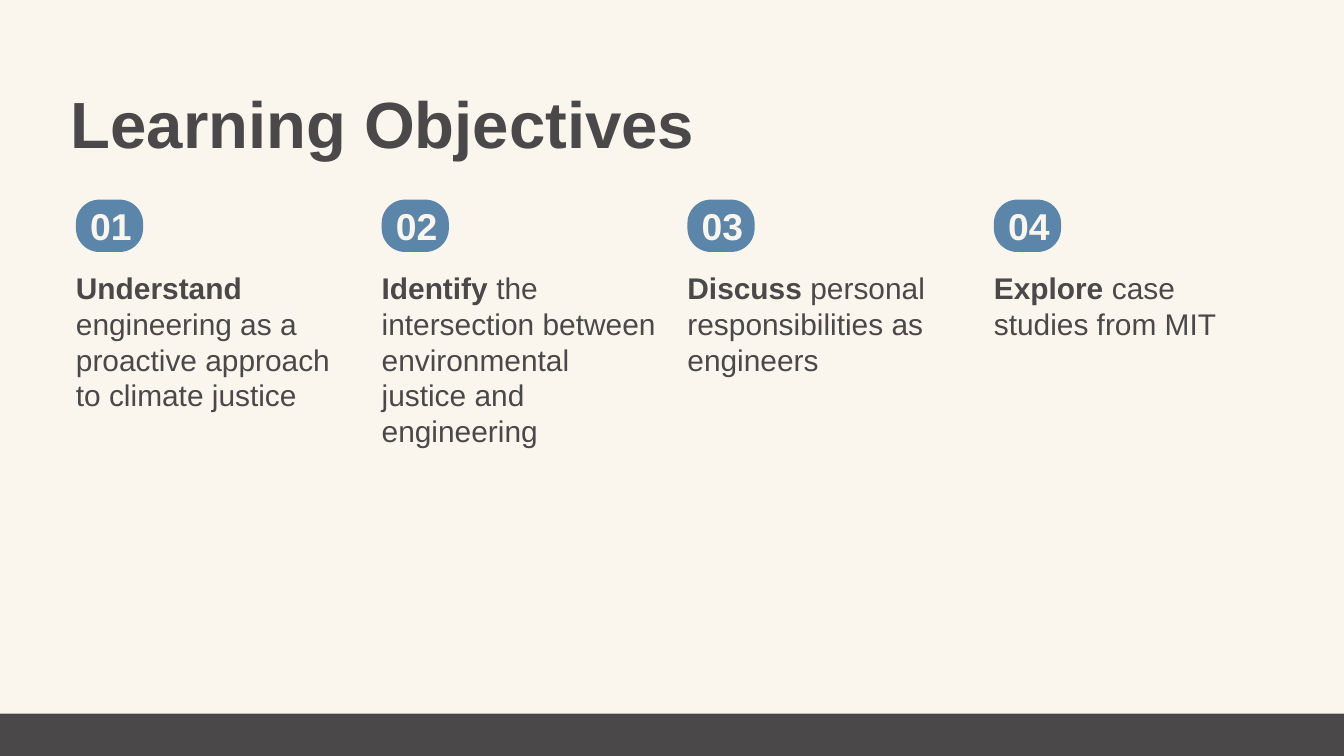
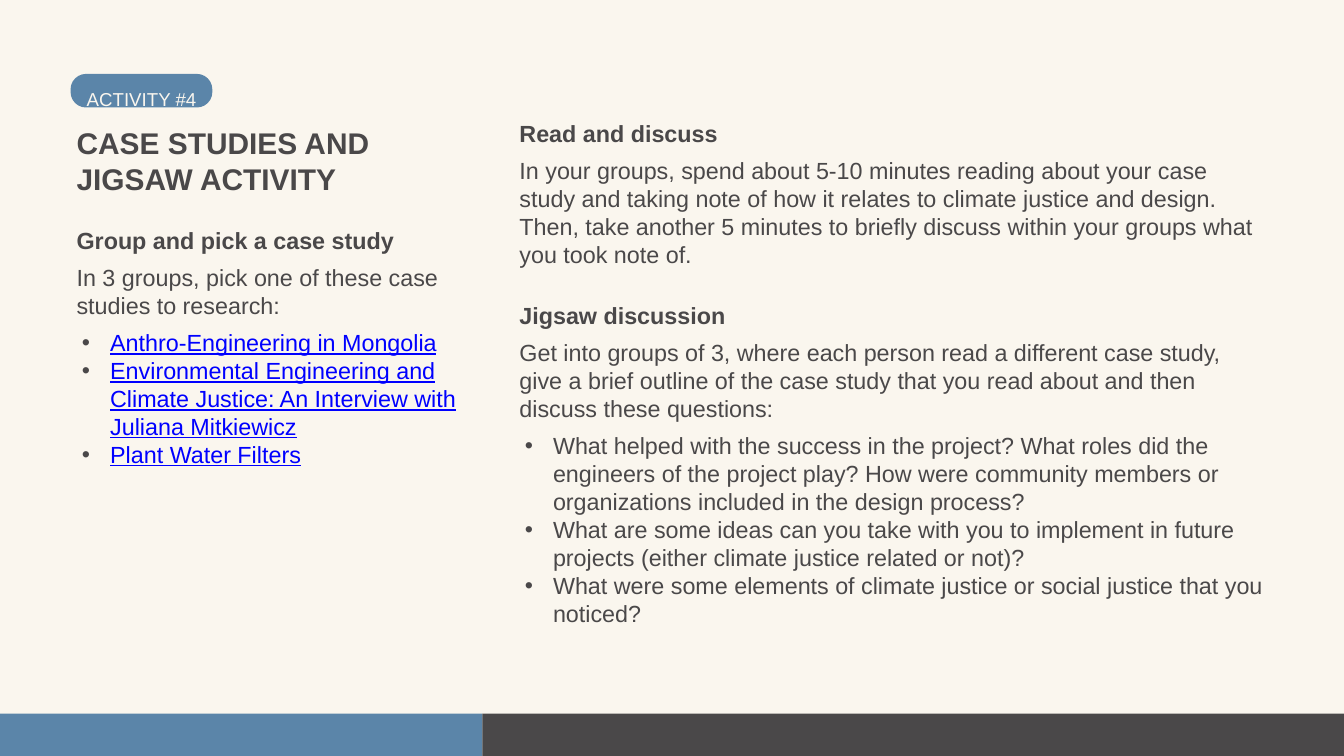
from lxml.etree import SubElement
from pptx import Presentation
from pptx.dml.color import RGBColor
from pptx.enum.shapes import MSO_SHAPE
from pptx.enum.text import MSO_ANCHOR, MSO_AUTO_SIZE
from pptx.oxml.ns import qn
from pptx.util import Pt

PX = 9144
WIDTH, HEIGHT = 2000, 1125
BAND_TOP = 1062
CREAM = RGBColor(0xFA, 0xF6, 0xEE)
CHARCOAL = RGBColor(0x4A, 0x48, 0x49)
BLUE = RGBColor(0x5B, 0x85, 0xA9)
LINK_BLUE = RGBColor(0x00, 0x00, 0xFF)
FONT = "Arial"
BODY_SIZE = 25


def add_block(page, kind, left, top, width, height, colour):
    block = page.shapes.add_shape(kind, left * PX, top * PX, width * PX, height * PX)
    block.shadow.inherit = False
    block.fill.solid()
    block.fill.fore_color.rgb = colour
    block.line.fill.background()
    return block


def add_text(page, left, top, width, height, size, spans, colour=CHARCOAL,
             bullets=(), bullet_colour=CHARCOAL, underline=None, spacing=None):
    box = page.shapes.add_textbox(left * PX, top * PX, width * PX, height * PX)
    frame = box.text_frame
    frame.word_wrap = True
    frame.auto_size = MSO_AUTO_SIZE.SHAPE_TO_FIT_TEXT
    frame.vertical_anchor = MSO_ANCHOR.TOP
    frame.margin_left = frame.margin_right = frame.margin_top = frame.margin_bottom = 0
    rows = [spans] + [[(bullet, False)] for bullet in bullets]
    for index, row in enumerate(rows):
        para = frame.add_paragraph() if index else frame.paragraphs[0]
        if index:
            para.level = 1
            props = para._p.get_or_add_pPr()
            props.set("marL", str(50 * PX))
            props.set("indent", str(-42 * PX))
            tint = SubElement(props, qn("a:buClr"))
            SubElement(tint, qn("a:srgbClr")).set("val", str(CHARCOAL))
            SubElement(props, qn("a:buFont")).set("typeface", FONT)
            SubElement(props, qn("a:buChar")).set("char", "•")
        para.line_spacing = spacing or Pt(size * 1.2)
        if index == 1:
            para.space_before = Pt(10)
        for words, bold in row:
            span = para.add_run()
            span.text = words
            span.font.name = FONT
            span.font.size = Pt(size)
            span.font.bold = bold
            span.font.underline = underline if index else None
            span.font.color.rgb = bullet_colour if index else colour


deck = Presentation()
deck.slide_width = WIDTH * PX
deck.slide_height = HEIGHT * PX

bands_by_page = [
    [(0, WIDTH, CHARCOAL)],
    [(0, 718, BLUE), (718, WIDTH, CHARCOAL)],
]
for bands in bands_by_page:
    page = deck.slides.add_slide(deck.slide_layouts[6])
    page.background.fill.solid()
    page.background.fill.fore_color.rgb = CREAM
    for start, end, colour in bands:
        add_block(page, MSO_SHAPE.RECTANGLE, start, BAND_TOP, end - start,
                  HEIGHT - BAND_TOP, colour)

objectives_page, activity_page = deck.slides

add_text(objectives_page, 105, 124, 1782, 118, 70, [("Learning Objectives", True)])
objectives = [
    ("Understand", " engineering as a proactive approach to climate justice", 215),
    ("Identify", " the intersection between environmental justice and engineering", 269),
    ("Discuss", " personal responsibilities as engineers", 162),
    ("Explore", " case studies from MIT", 108),
]
for index, (verb, rest, height) in enumerate(objectives):
    left = 113 + index * 1366 // 3
    badge = add_block(objectives_page, MSO_SHAPE.ROUNDED_RECTANGLE, left, 297, 100, 78, BLUE)
    badge.adjustments[0] = 0.45
    add_text(objectives_page, left + 21, 302, 339, 67, 40, [(f"{index + 1:02}", True)], CREAM)
    add_text(objectives_page, left, 401, 413, height, 32, [(verb, True), (rest, False)])

tag = add_block(activity_page, MSO_SHAPE.ROUNDED_RECTANGLE, 105, 110, 211, 50, BLUE)
tag.adjustments[0] = 0.46
add_text(activity_page, 129, 118, 933, 34, 20, [("ACTIVITY #4", False)], CREAM, spacing=1.4)
add_text(activity_page, 114, 185, 465, 108, 32, [("CASE STUDIES AND JIGSAW ACTIVITY", True)])

case_studies = [
    "Anthro-Engineering in Mongolia",
    "Environmental Engineering and Climate Justice: An Interview with Juliana Mitkiewicz",
    "Plant Water Filters",
]
questions = [
    "What helped with the success in the project? What roles did the engineers of the project "
    "play? How were community members or organizations included in the design process?",
    "What are some ideas can you take with you to implement in future projects (either climate "
    "justice related or not)?",
    "What were some elements of climate justice or social justice that you noticed?",
]
steps = [
    (114, 336, 566, 309, "Group and pick a case study",
     "In 3 groups, pick one of these case studies to research:",
     case_studies, LINK_BLUE, True),
    (773, 178, 1115, 168, "Read and discuss",
     "In your groups, spend about 5-10 minutes reading about your case study and taking note of "
     "how it relates to climate justice and design. Then, take another 5 minutes to briefly "
     "discuss within your groups what you took note of.",
     [], CHARCOAL, None),
    (773, 448, 1115, 435, "Jigsaw discussion",
     "Get into groups of 3, where each person read a different case study, give a brief outline "
     "of the case study that you read about and then discuss these questions:",
     questions, CHARCOAL, None),
]
for left, top, width, height, heading, intro, bullets, bullet_colour, underline in steps:
    add_text(activity_page, left, top, width, 42, BODY_SIZE, [(heading, True)])
    add_text(activity_page, left, top + 55, width, height, BODY_SIZE, [(intro, False)],
             bullets=bullets, bullet_colour=bullet_colour, underline=underline)

deck.save("out.pptx")
